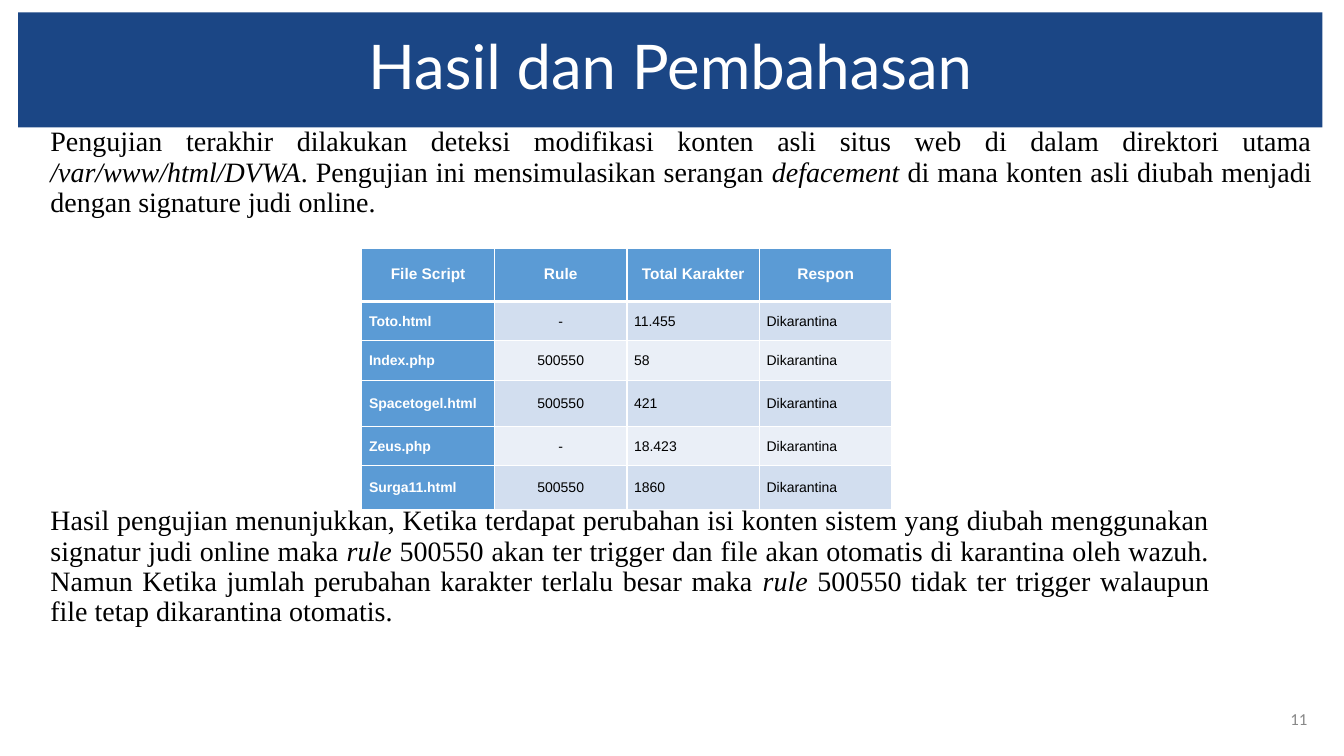
from lxml import etree
from pptx import Presentation
from pptx.dml.color import RGBColor
from pptx.enum import shapes, text
from pptx.oxml.ns import qn
from pptx.util import Cm, Pt

# Content: text between asterisks is italic
TITLE = "Hasil dan Pembahasan"
INTRO = (
    "Pengujian terakhir dilakukan deteksi modifikasi konten asli situs web di dalam "
    "direktori utama */var/www/html/DVWA*. Pengujian ini mensimulasikan serangan "
    "*defacement* di mana konten asli diubah menjadi dengan signature judi online."
)
RESULT = (
    "Hasil pengujian menunjukkan, Ketika terdapat perubahan isi konten sistem yang "
    "diubah menggunakan signatur judi online maka *rule* 500550 akan ter trigger dan "
    "file akan otomatis di karantina oleh wazuh. Namun Ketika jumlah perubahan karakter "
    "terlalu besar maka *rule* 500550 tidak ter trigger walaupun file tetap dikarantina "
    "otomatis."
)
ROWS = [
    ("File Script", "Rule", "Total Karakter", "Respon"),
    ("Toto.html", "-", "11.455", "Dikarantina"),
    ("Index.php", "500550", "58", "Dikarantina"),
    ("Spacetogel.html", "500550", "421", "Dikarantina"),
    ("Zeus.php", "-", "18.423", "Dikarantina"),
    ("Surga11.html", "500550", "1860", "Dikarantina"),
]
HEIGHTS = [1.35, 0.99, 0.99, 1.17, 0.99, 1.09]
WIDTH = 3.34
PAGE = "11"
COLORS = {
    "navy": "1B4685", "blue": "5B9BD5", "odd": "D2DEEF", "even": "EAEFF7",
    "white": "FFFFFF", "black": "000000", "gray": "888888",
}
ALIGN = text.PP_ALIGN


def color(name):
    return RGBColor.from_string(COLORS[name])


def style(font, face, size, tone, bold=False):
    font.name, font.size, font.bold = face, Pt(size), bold
    font.color.rgb = color(tone)


def add_box(slide, left, top, width, height):
    box = slide.shapes.add_textbox(Cm(left), Cm(top), Cm(width), Cm(height))
    frame = box.text_frame
    frame.word_wrap = True
    frame.vertical_anchor = text.MSO_ANCHOR.MIDDLE
    return frame


def add_body(slide, words, *place):
    para = add_box(slide, *place).paragraphs[0]
    para.alignment, para.line_spacing = ALIGN.JUSTIFY, 0.9
    para._p.get_or_add_pPr().set("marL", str(Cm(0.16)))
    for i, part in enumerate(words.split("*")):
        run = para.add_run()
        run.text = part
        style(run.font, "Times New Roman", 20, "black")
        run.font.italic = i % 2 == 1


def add_edges(cell, row):
    props = cell._tc.get_or_add_tcPr()
    for i, side in enumerate("LRTB"):
        thick = (row, side) in ((0, "B"), (1, "T"))
        line = etree.Element(qn("a:ln" + side), w=str(Pt(3 if thick else 1)))
        fill = etree.SubElement(line, qn("a:solidFill"))
        etree.SubElement(fill, qn("a:srgbClr"), val=COLORS["white"])
        props.insert(i, line)


def fill_cell(cell, words, row, col):
    head = row == 0
    label = head or col == 0
    cell.fill.solid()
    cell.fill.fore_color.rgb = color("blue" if label else "odd" if row % 2 else "even")
    cell.margin_left = cell.margin_right = Cm(0.18)
    cell.margin_top = cell.margin_bottom = 0
    cell.vertical_anchor = text.MSO_ANCHOR.MIDDLE
    para = cell.text_frame.paragraphs[0]
    para.text = words
    para.alignment = ALIGN.CENTER if head or col == 1 else ALIGN.LEFT
    if head:
        para.line_spacing = 0.97
    style(para.runs[0].font, "Arial", 11 if head else 10,
          "white" if label else "black", label)
    add_edges(cell, row)


def main():
    deck = Presentation()
    deck.slide_width, deck.slide_height = Cm(33.87), Cm(19.05)
    slide = deck.slides.add_slide(deck.slide_layouts[6])

    # Page number
    para = add_box(slide, 31.75, 17.6, 1.45, 1.02).paragraphs[0]
    para.text, para.alignment = PAGE, ALIGN.RIGHT
    style(para.runs[0].font, "Calibri", 12, "gray")

    # Title bar
    bar = slide.shapes.add_shape(
        shapes.MSO_SHAPE.RECTANGLE, Cm(0.46), Cm(0.31), Cm(32.87), Cm(2.9))
    bar.shadow.inherit = False
    bar.fill.solid()
    bar.fill.fore_color.rgb = color("navy")
    bar.line.fill.background()
    bar.text_frame.vertical_anchor = text.MSO_ANCHOR.MIDDLE
    para = bar.text_frame.paragraphs[0]
    para.text, para.alignment, para.line_spacing = TITLE, ALIGN.CENTER, 0.9
    style(para.runs[0].font, "Lato", 44, "white")

    # Paragraphs above and below the table
    add_body(slide, INTRO, 0.86, 2.9, 32.46, 2.92)
    add_body(slide, RESULT, 0.86, 12.45, 29.87, 3.68)

    # Test table
    count = len(ROWS[0])
    table = slide.shapes.add_table(
        len(ROWS), count, Cm(9.12), Cm(6.25),
        Cm(WIDTH * count), Cm(sum(HEIGHTS))).table
    for col in table.columns:
        col.width = Cm(WIDTH)
    for r, (cells, height) in enumerate(zip(ROWS, HEIGHTS)):
        table.rows[r].height = Cm(height)
        for c, words in enumerate(cells):
            fill_cell(table.cell(r, c), words, r, c)

    deck.save("out.pptx")


if __name__ == "__main__":
    main()
